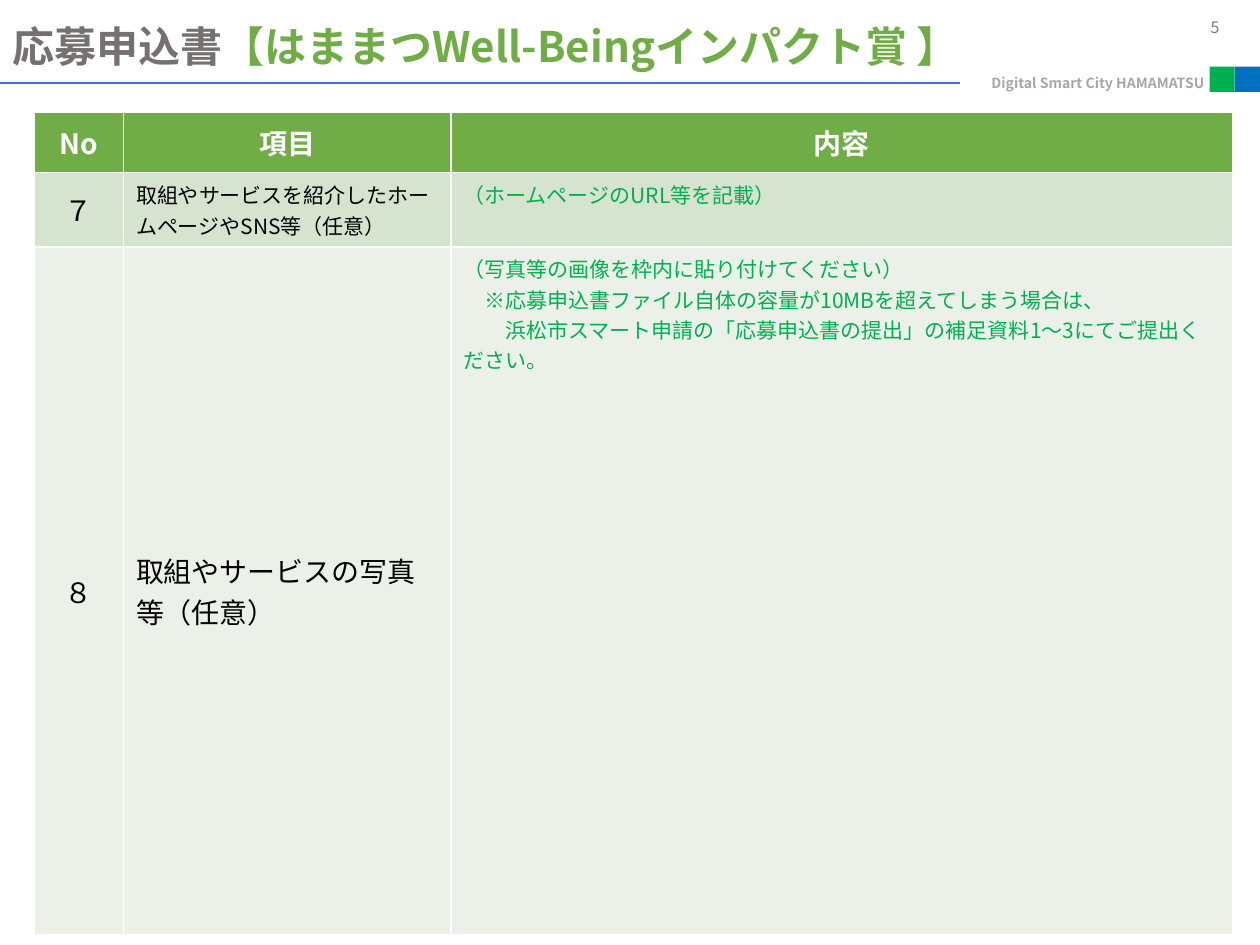
from lxml import etree
from pptx import Presentation
from pptx.dml.color import RGBColor
from pptx.enum.shapes import MSO_CONNECTOR, MSO_SHAPE
from pptx.enum.text import MSO_ANCHOR, PP_ALIGN
from pptx.oxml.ns import qn
from pptx.util import Inches, Pt

LEFT, CENTER, RIGHT = PP_ALIGN.LEFT, PP_ALIGN.CENTER, PP_ALIGN.RIGHT
TOP, MIDDLE = MSO_ANCHOR.TOP, MSO_ANCHOR.MIDDLE
FONT = "Noto Sans CJK JP"
COLORS = {
    "white": "FFFFFF", "black": "000000", "gray": "767171", "pale": "A6A6A6",
    "dark": "404040", "lime": "70AD47", "green": "00B050", "blue": "0070C0",
    "rule": "4472C4", "band1": "D5E3CF", "band2": "EBF1E9",
}
HEADS = ["No", "項目", "内容"]
ROWS = [
    ("７", "取組やサービスを紹介したホームページやSNS等（任意）", 12,
     "（ホームページのURL等を記載）"),
    ("８", "取組やサービスの写真等（任意）", 16,
     "（写真等の画像を枠内に貼り付けてください）\n"
     "\u3000※応募申込書ファイル自体の容量が10MBを超えてしまう場合は、\n"
     "\u3000\u3000浜松市スマート申請の「応募申込書の提出」の補足資料1～3にてご提出ください。"),
]
COLS = [0.71, 2.6, 6.2]
HEIGHTS = [0.48, 0.59, 5.46]


def color(name):
    return RGBColor.from_string(COLORS[name])


def style(run, size, tint, bold=False):
    font = run.font
    font.size, font.bold, font.name = Pt(size), bold, FONT
    font.color.rgb = color(tint)
    etree.SubElement(run._r.get_or_add_rPr(), qn("a:ea"), typeface=FONT)


def write(frame, text, size, tint, bold=False, align=LEFT):
    frame.text = text
    for para in frame.paragraphs:
        para.alignment = align
        for run in para.runs:
            style(run, size, tint, bold)


def add_text(slide, x, y, w, h, *args, **kwargs):
    box = slide.shapes.add_textbox(Inches(x), Inches(y), Inches(w), Inches(h))
    box.text_frame.word_wrap = True
    write(box.text_frame, *args, **kwargs)
    return box


def add_title(slide, x, y, w, h):
    title = slide.shapes.title
    title.left, title.top = Inches(x), Inches(y)
    title.width, title.height = Inches(w), Inches(h)
    frame = title.text_frame
    frame.word_wrap, frame.vertical_anchor = True, MIDDLE
    para = frame.paragraphs[0]
    para.alignment = LEFT
    for text, tint in [("応募申込書", "gray"),
                       ("【はままつWell-Beingインパクト賞 】", "lime")]:
        run = para.add_run()
        run.text = text
        style(run, 24, tint, True)


def add_brand(slide, x, y, w):
    """Rule, program name and two squares across a band of width w."""
    side = 0.2
    for i, tint in enumerate(["green", "blue"]):
        square = slide.shapes.add_shape(
            MSO_SHAPE.RECTANGLE, Inches(x + w - (2 - i) * side), Inches(y),
            Inches(side), Inches(side))
        square.shadow.inherit = False
        square.fill.solid()
        square.fill.fore_color.rgb = color(tint)
        square.line.fill.background()
    add_text(slide, x + w - 3.19, y + 0.01, 2.85, 0.24,
             "Digital Smart City HAMAMATSU", 8, "pale", True, RIGHT)
    level = Inches(y + 0.13)
    rule = slide.shapes.add_connector(
        MSO_CONNECTOR.STRAIGHT, Inches(x + 7.62), level, Inches(x), level)
    rule.line.color.rgb = color("rule")
    rule.line.width = Pt(0.75)
    etree.SubElement(rule._element.spPr, qn("a:effectLst"))


def add_number(slide, x, y, w, h):
    box = add_text(slide, x, y, w, h, "5", 9, "dark")
    tint = box._element.find(".//" + qn("a:srgbClr"))
    etree.SubElement(tint, qn("a:alpha"), val="70000")


def fill_cell(cell, back, anchor, *args):
    cell.fill.solid()
    cell.fill.fore_color.rgb = color(back)
    cell.vertical_anchor = anchor
    write(cell.text_frame, *args)


def add_form(slide, x, y):
    table = slide.shapes.add_table(
        len(HEIGHTS), len(COLS), Inches(x), Inches(y),
        Inches(sum(COLS)), Inches(sum(HEIGHTS))).table
    for col, width in zip(table.columns, COLS):
        col.width = Inches(width)
    for row, height in zip(table.rows, HEIGHTS):
        row.height = Inches(height)
    for i, head in enumerate(HEADS):
        fill_cell(table.cell(0, i), "lime", MIDDLE, head, 16, "white", True, CENTER)
    for i, (num, item, size, note) in enumerate(ROWS, 1):
        back = f"band{i}"
        fill_cell(table.cell(i, 0), back, MIDDLE, num, 16, "black", False, CENTER)
        fill_cell(table.cell(i, 1), back, MIDDLE, item, size, "black")
        fill_cell(table.cell(i, 2), back, TOP, note, 12, "green")


def main():
    deck = Presentation()
    deck.slide_width, deck.slide_height = Inches(10), Inches(7.5)
    slide = deck.slides.add_slide(deck.slide_layouts.get_by_name("Title Only"))
    add_brand(slide, 0, 0.53, 10)
    add_number(slide, 9.51, 0.09, 0.49, 0.4)
    add_form(slide, 0.27, 0.89)
    add_title(slide, 0, 0.11, 8.35, 0.5)
    deck.save("out.pptx")


if __name__ == "__main__":
    main()
